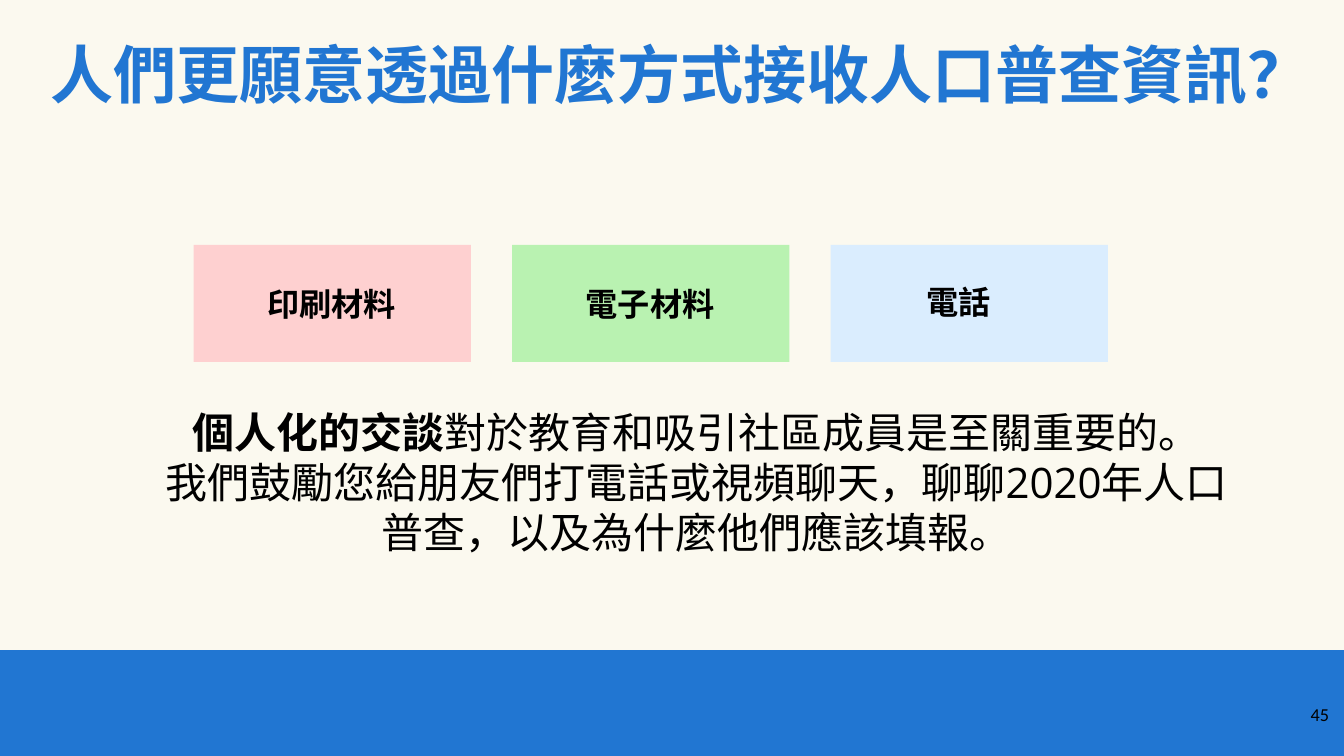
from pptx import Presentation
from pptx import util as u
from pptx.dml.color import RGBColor
from pptx.enum import shapes, text

THEME = {
    "background": "FBF9EF", "blue": "2176D2", "black": "000000",
    "pink": "FED0D0", "green": "B9F2B1", "sky": "DAEDFE",
    "title": {"name": "Montserrat", "size": u.Pt(45), "bold": True},
    "label": {"name": "Open Sans", "size": u.Pt(23), "bold": True},
    "body": {"name": "Open Sans", "size": u.Pt(30), "bold": False},
    "strong": {"name": "Open Sans", "size": u.Pt(30), "bold": True},
    "number": {"name": "Calibri", "size": u.Pt(13), "bold": False},
}

presentation = Presentation()
presentation.slide_width = u.Inches(13.33)
presentation.slide_height = u.Inches(7.5)
slide = presentation.slides.add_slide(presentation.slide_layouts[6])
slide.background.fill.solid()
slide.background.fill.fore_color.rgb = RGBColor.from_string(THEME["background"])

# Every area is (left, top, width, height) in percent of the slide
PERCENT = [presentation.slide_width / 100, presentation.slide_height / 100] * 2


def add_block(area, color):
    place = [int(share * unit) for share, unit in zip(area, PERCENT)]
    block = slide.shapes.add_shape(shapes.MSO_SHAPE.RECTANGLE, *place)
    block.shadow.inherit = False
    block.fill.solid()
    block.fill.fore_color.rgb = RGBColor.from_string(THEME[color])
    block.line.fill.background()


def add_text(area, paragraphs, align, color="black"):
    """Add a text box; each paragraph is a list of (wording, style name) runs."""
    place = [int(share * unit) for share, unit in zip(area, PERCENT)]
    frame = slide.shapes.add_textbox(*place).text_frame
    frame.word_wrap = True
    for index, runs in enumerate(paragraphs):
        paragraph = frame.add_paragraph() if index else frame.paragraphs[0]
        paragraph.alignment = align
        for wording, style in runs:
            run = paragraph.add_run()
            run.text = wording
            run.font.color.rgb = RGBColor.from_string(THEME[color])
            for attribute, value in THEME[style].items():
                setattr(run.font, attribute, value)


LEFT, CENTER, RIGHT = (text.PP_ALIGN.LEFT, text.PP_ALIGN.CENTER,
                       text.PP_ALIGN.RIGHT)

add_block((0, 86, 100, 14), "blue")
add_text((3, 4, 94, 33.6),
         [[("人們更願意透過什麼方式接收人口普查資訊？", "title")]], LEFT, "blue")

# Three channels: coloured block, label, label's left and top
channels = [
    ("pink", "印刷材料", 11.33, 36.93),
    ("green", "電子材料", 35.03, 36.93),
    ("sky", "電話", 57.99, 36.67),
]
for column, (color, label, label_left, label_top) in enumerate(channels):
    add_block((14.4 + column * 23.7, 32.4, 20.63, 15.47), color)
    add_text((label_left, label_top, 26.71, 8.53), [[(label, "label")]], CENTER)

add_text((10.05, 53.07, 83.57, 28.27), [
    [("個人化的交談", "strong"), ("對於教育和吸引社區成員是至關重要的。", "body")],
    [("我們鼓勵您給朋友們打電話或視頻聊天，聊聊2020年人口普查，"
      "以及為什麼他們應該填報。", "body")],
], CENTER)

add_text((93.62, 92.4, 6, 7.6), [[("45", "number")]], RIGHT)

presentation.save("out.pptx")
